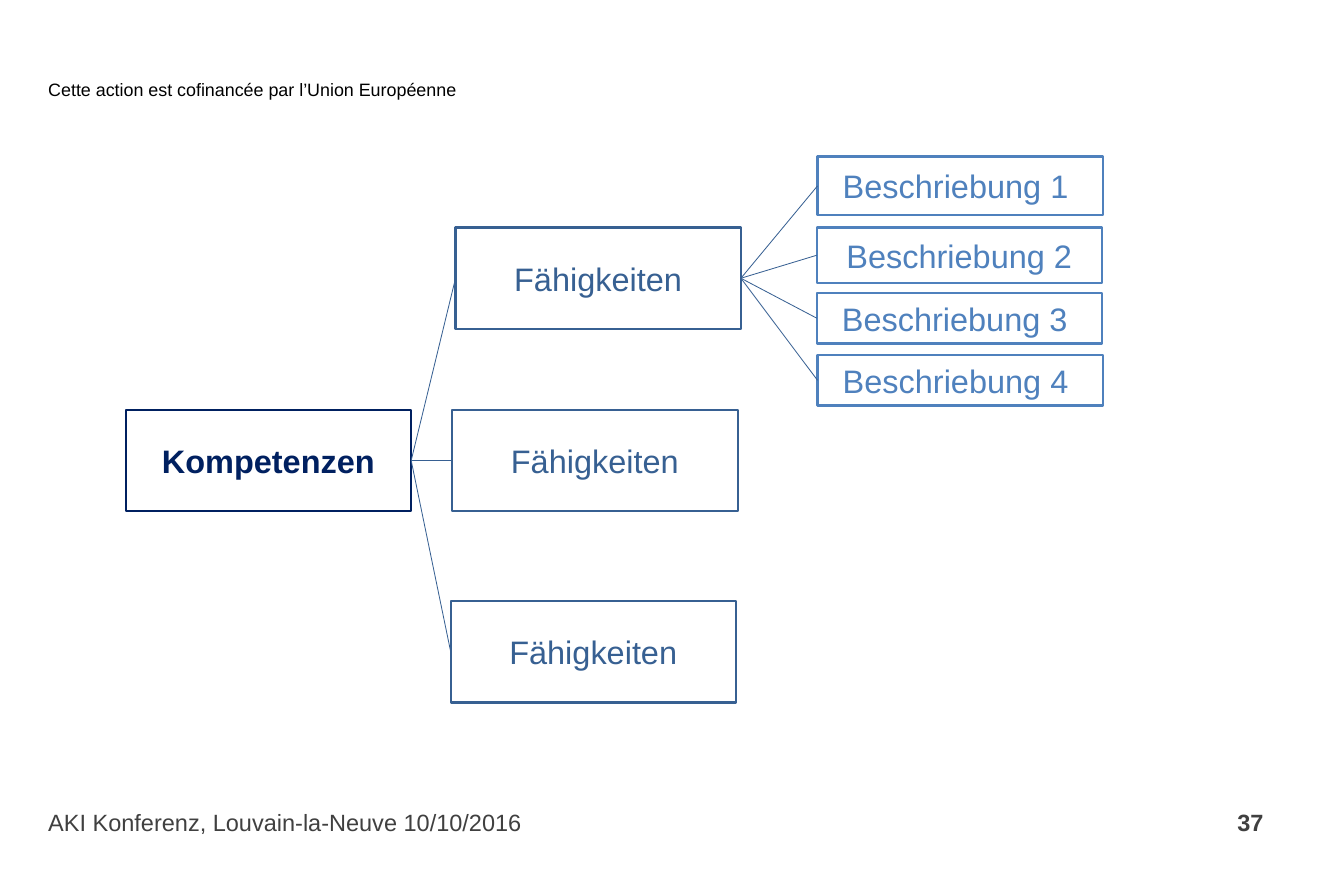
from dataclasses import dataclass

import pptx
import pptx.dml.color
import pptx.enum.shapes
import pptx.enum.text
import pptx.oxml.ns
import pptx.util
from pptx.util import Inches

ALIGN = pptx.enum.text.PP_ALIGN
ANCHOR = pptx.enum.text.MSO_ANCHOR
NAVY, BLUE, LIGHT_BLUE = "002060", "376092", "4F81BD"
WHITE, BLACK, GREY = "FFFFFF", "000000", "404040"
BOX_WIDTH = 3.54
RIGHT, LEFT = 3, 1  # connection sites of a rectangle


@dataclass
class Box:
    text: str
    left: float
    top: float
    height: float
    color: str
    bold: bool = False


def rgb(value: str) -> pptx.dml.color.RGBColor:
    return pptx.dml.color.RGBColor.from_string(value)


def write(sp, text: str, *, size: float, color: str, bold: bool = False,
          align=ALIGN.LEFT, anchor=ANCHOR.TOP, wrap: bool = True) -> None:
    tf = sp.text_frame
    tf.word_wrap = wrap
    tf.vertical_anchor = anchor
    p = tf.paragraphs[0]
    p.alignment = align
    r = p.add_run()
    r.text = text
    r.font.name = "Arial"
    r.font.size = pptx.util.Pt(size)
    r.font.bold = bold
    r.font.color.rgb = rgb(color)


def add_label(slide, text: str, left: float, top: float, width: float,
              height: float, **style) -> None:
    sp = slide.shapes.add_textbox(Inches(left), Inches(top), Inches(width), Inches(height))
    write(sp, text, **style)


def add_box(slide, box: Box):
    sp = slide.shapes.add_shape(
        pptx.enum.shapes.MSO_SHAPE.RECTANGLE, Inches(box.left), Inches(box.top),
        Inches(BOX_WIDTH), Inches(box.height))
    sp.shadow.inherit = False
    sp.fill.solid()
    sp.fill.fore_color.rgb = rgb(WHITE)
    sp.line.color.rgb = rgb(box.color)
    sp.line.width = pptx.util.Pt(2)
    write(sp, box.text, size=29, color=box.color, bold=box.bold,
          align=ALIGN.CENTER, anchor=ANCHOR.MIDDLE)
    return sp


def link(slide, parent, child) -> None:
    line = slide.shapes.add_connector(pptx.enum.shapes.MSO_CONNECTOR.STRAIGHT, 0, 0, 0, 0)
    line.begin_connect(parent, RIGHT)
    line.end_connect(child, LEFT)
    line.line.color.rgb = rgb(BLUE)
    line.line.width = pptx.util.Pt(0.75)
    sp_pr = line._element.spPr
    sp_pr.append(sp_pr.makeelement(pptx.oxml.ns.qn("a:effectLst"), {}))


COMPETENCE = Box("Kompetenzen", 1.56, 5.08, 1.26, NAVY, bold=True)
SKILLS = [Box("Fähigkeiten", left, top, 1.26, BLUE)
          for left, top in [(5.65, 2.82), (5.61, 5.08), (5.59, 7.45)]]
DESCRIPTIONS = [
    Box("Beschriebung 1 ", 10.14, 1.94, 0.73, LIGHT_BLUE),
    Box("Beschriebung 2", 10.13, 2.82, 0.69, LIGHT_BLUE),
    Box("Beschriebung 3 ", 10.13, 3.63, 0.63, LIGHT_BLUE),
    Box("Beschriebung 4 ", 10.14, 4.4, 0.63, LIGHT_BLUE),
]


def main() -> None:
    prs = pptx.Presentation()
    prs.slide_width, prs.slide_height = Inches(16.67), Inches(11.11)
    slide = prs.slides.add_slide(prs.slide_layouts[6])

    # Header
    add_label(slide, "Cette action est cofinancée par l’Union Européenne",
              0.5, 0.93, 5.32, 0.37, size=16, color=BLACK, wrap=False)

    # Tree of competence, skills and descriptions
    competence = add_box(slide, COMPETENCE)
    skills = [add_box(slide, box) for box in SKILLS]
    descriptions = [add_box(slide, box) for box in DESCRIPTIONS]
    for skill in skills:
        link(slide, competence, skill)
    for description in descriptions:
        link(slide, skills[0], description)

    # Footer
    add_label(slide, "AKI Konferenz, Louvain-la-Neuve 10/10/2016",
              0.5, 9.97, 10.89, 0.94, size=21, color=GREY)
    add_label(slide, "37", 11.88, 9.97, 3.89, 0.59,
              size=21, color=GREY, bold=True, align=ALIGN.RIGHT)

    prs.save("out.pptx")


if __name__ == "__main__":
    main()
